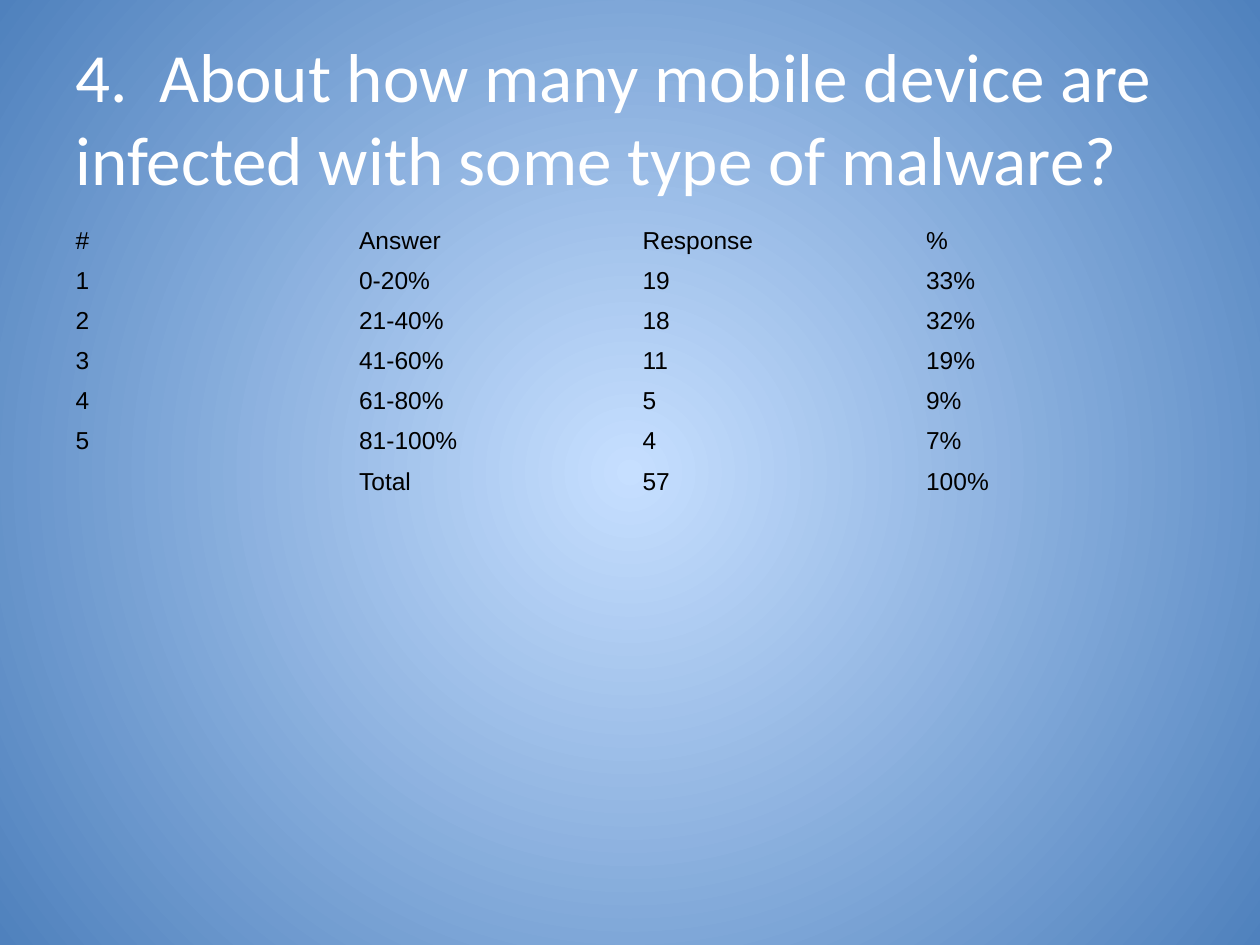
from lxml.etree import SubElement
from pptx import Presentation
from pptx.dml.color import RGBColor
from pptx.enum.text import MSO_ANCHOR, PP_ALIGN
from pptx.oxml.ns import qn
from pptx.util import Pt

COLORS = {"center": "C6DFFF", "edge": "4F81BD", "title": "FFFFFF", "text": "000000"}
NO_STYLE = "{2D5ABB26-0587-4C30-8999-92F81FD0307C}"
ROWS = [
    ("#", "Answer", "Response", "%"),
    ("1", "0-20%", "19", "33%"),
    ("2", "21-40%", "18", "32%"),
    ("3", "41-60%", "11", "19%"),
    ("4", "61-80%", "5", "9%"),
    ("5", "81-100%", "4", "7%"),
    ("", "Total", "57", "100%"),
]
COL_W, ROW_H = 162, 22.9


def write(tf, text, size, font, color):
    p = tf.paragraphs[0]
    p.alignment = PP_ALIGN.LEFT
    r = p.add_run()
    r.text = text
    r.font.size = Pt(size)
    r.font.name = font
    r.font.color.rgb = RGBColor.from_string(COLORS[color])


prs = Presentation()
prs.slide_width, prs.slide_height = Pt(720), Pt(540)
s = prs.slides.add_slide(prs.slide_layouts[5])

fill = s.background.fill
fill.gradient()
for stop, position, color in zip(fill.gradient_stops, (0, 1), ("center", "edge")):
    stop.position = position
    stop.color.rgb = RGBColor.from_string(COLORS[color])
grad = s.background._cSld.find(".//" + qn("a:gradFill"))
grad.remove(grad.find(qn("a:lin")))
circle = SubElement(grad, qn("a:path"), path="circle")
SubElement(circle, qn("a:fillToRect"), l="50000", t="50000", r="50000", b="50000")

title = s.shapes.title
title.left, title.top, title.width, title.height = Pt(36), Pt(21.6), Pt(648), Pt(90)
title.text_frame.vertical_anchor = MSO_ANCHOR.MIDDLE
title.text_frame.word_wrap = True
write(title.text_frame, "4.  About how many mobile device are infected with some type of malware?",
      size=39.5, font="Calibri", color="title")

sp = s.shapes.add_table(len(ROWS), len(ROWS[0]), Pt(36), Pt(126),
                        Pt(COL_W * len(ROWS[0])), Pt(ROW_H * len(ROWS)))
table = sp.table
table.first_row = table.horz_banding = False
table._tbl.tblPr.find(qn("a:tableStyleId")).text = NO_STYLE
for row, values in zip(table.rows, ROWS):
    row.height = Pt(ROW_H)
    for cell, value in zip(row.cells, values):
        cell.fill.background()
        write(cell.text_frame, value, size=14, font="Arial", color="text")

prs.save("out.pptx")
